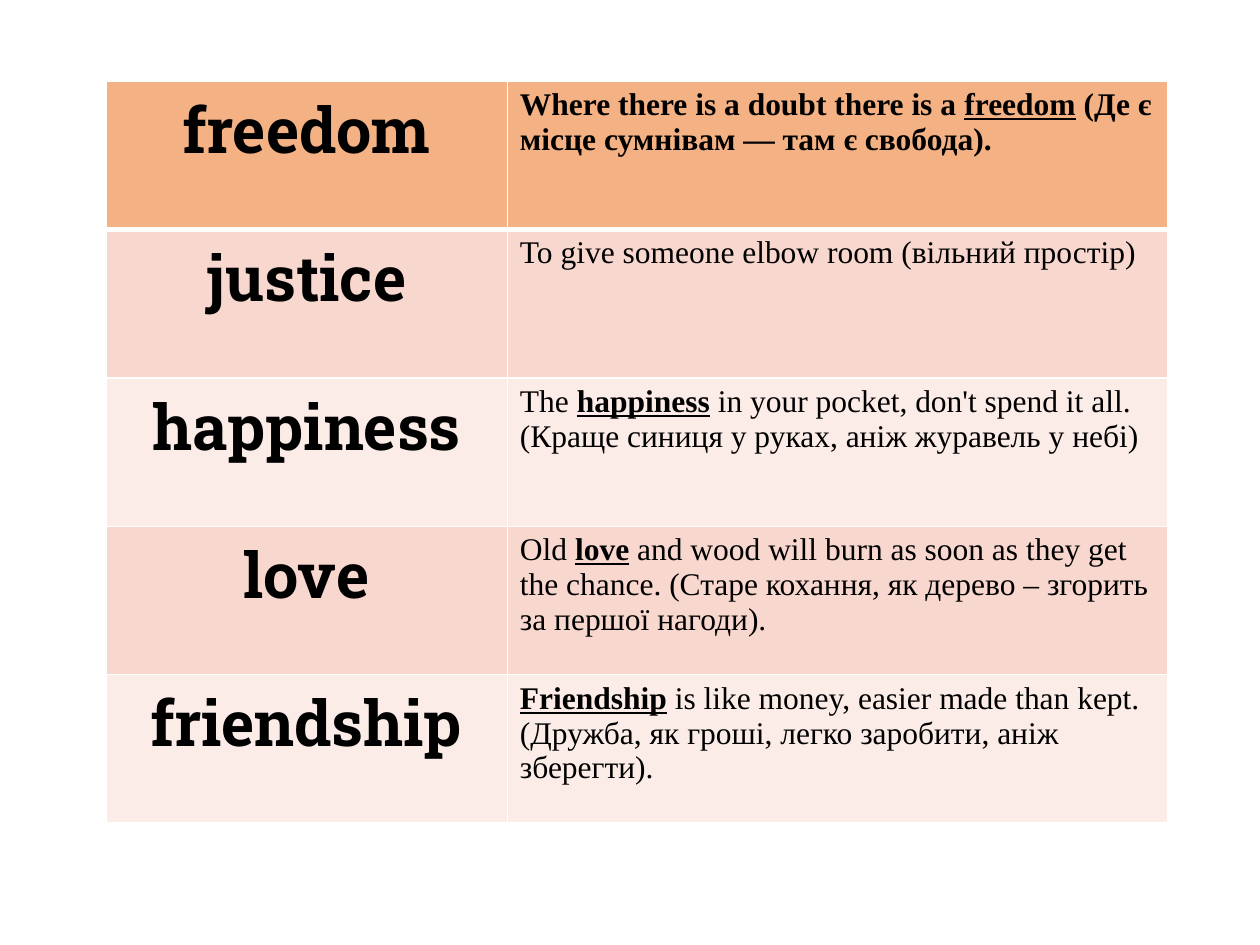
from lxml import etree
from pptx import Presentation
from pptx.dml.color import RGBColor
from pptx.enum import text
from pptx.oxml import ns
from pptx.util import Pt

BLACK = RGBColor(0x00, 0x00, 0x00)
WHITE = RGBColor(0xFF, 0xFF, 0xFF)
ORANGE = RGBColor(0xF4, 0xB1, 0x83)
PEACH = RGBColor(0xF8, 0xD7, 0xCE)
BLUSH = RGBColor(0xFC, 0xEC, 0xE8)

WORD_FONT = "Roboto Slab"
SAYING_FONT = "Times New Roman"
WORD_SHARE = 0.378

# Each saying is split into the text before, the key word, and the text after.
ROWS = [
    ("freedom", ("Where there is a doubt there is a ", "freedom",
                 " (Де є місце сумнівам — там є свобода).")),
    ("justice", ("To give someone elbow room (вільний простір)", "", "")),
    ("happiness", ("The ", "happiness",
                   " in your pocket, don't spend it all. "
                   "(Краще синиця у руках, аніж журавель у небі)")),
    ("love", ("Old ", "love",
              " and wood will burn as soon as they get the chance. "
              "(Старе кохання, як дерево – згорить за першої нагоди).")),
    ("friendship", ("", "Friendship",
                    " is like money, easier made than kept. "
                    "(Дружба, як гроші, легко заробити, аніж зберегти).")),
]


def set_borders(cell, top, bottom):
    """Draw white cell borders; top and bottom are widths in points."""
    properties = cell._tc.get_or_add_tcPr()
    widths = {"a:lnL": 1, "a:lnR": 1, "a:lnT": top, "a:lnB": bottom}
    for index, (tag, width) in enumerate(widths.items()):
        line = etree.Element(ns.qn(tag), w=str(Pt(width)))
        fill = etree.SubElement(line, ns.qn("a:solidFill"))
        etree.SubElement(fill, ns.qn("a:srgbClr"), val=str(WHITE))
        properties.insert(index, line)


def style_font(para, name, size, bold):
    para.font.name = name
    para.font.size = Pt(size)
    para.font.bold = bold
    para.font.color.rgb = BLACK


def write_word(cell, word):
    para = cell.text_frame.paragraphs[0]
    para.alignment = text.PP_ALIGN.CENTER
    para.add_run().text = word
    style_font(para, WORD_FONT, 36, True)


def write_saying(cell, parts, bold):
    para = cell.text_frame.paragraphs[0]
    style_font(para, SAYING_FONT, 18, bold)
    before, key, after = parts
    for part in filter(None, parts):
        span = para.add_run()
        span.text = part
        span.font.bold = bold
        if part == key:
            span.font.bold = True
            span.font.underline = True


def add_sayings_table(page, left, top, width, height):
    table = page.shapes.add_table(len(ROWS), 2, Pt(left), Pt(top),
                                  Pt(width), Pt(height)).table
    table.columns[0].width = Pt(width * WORD_SHARE)
    table.columns[1].width = Pt(width * (1 - WORD_SHARE))
    for index, (word, saying) in enumerate(ROWS):
        is_header = index == 0
        table.rows[index].height = Pt(height / len(ROWS))
        word_cell, saying_cell = table.rows[index].cells
        write_word(word_cell, word)
        write_saying(saying_cell, saying, is_header)
        for cell in (word_cell, saying_cell):
            cell.fill.solid()
            cell.fill.fore_color.rgb = (ORANGE if is_header
                                        else PEACH if index % 2 else BLUSH)
            set_borders(cell, top=3 if index == 1 else 1,
                        bottom=3 if is_header else 1)


def main():
    deck = Presentation()
    deck.slide_width, deck.slide_height = Pt(720), Pt(540)
    page = deck.slides.add_slide(deck.slide_layouts[6])
    add_sayings_table(page, 60.5, 46.2, 607, 424.3)
    deck.save("out.pptx")


if __name__ == "__main__":
    main()
